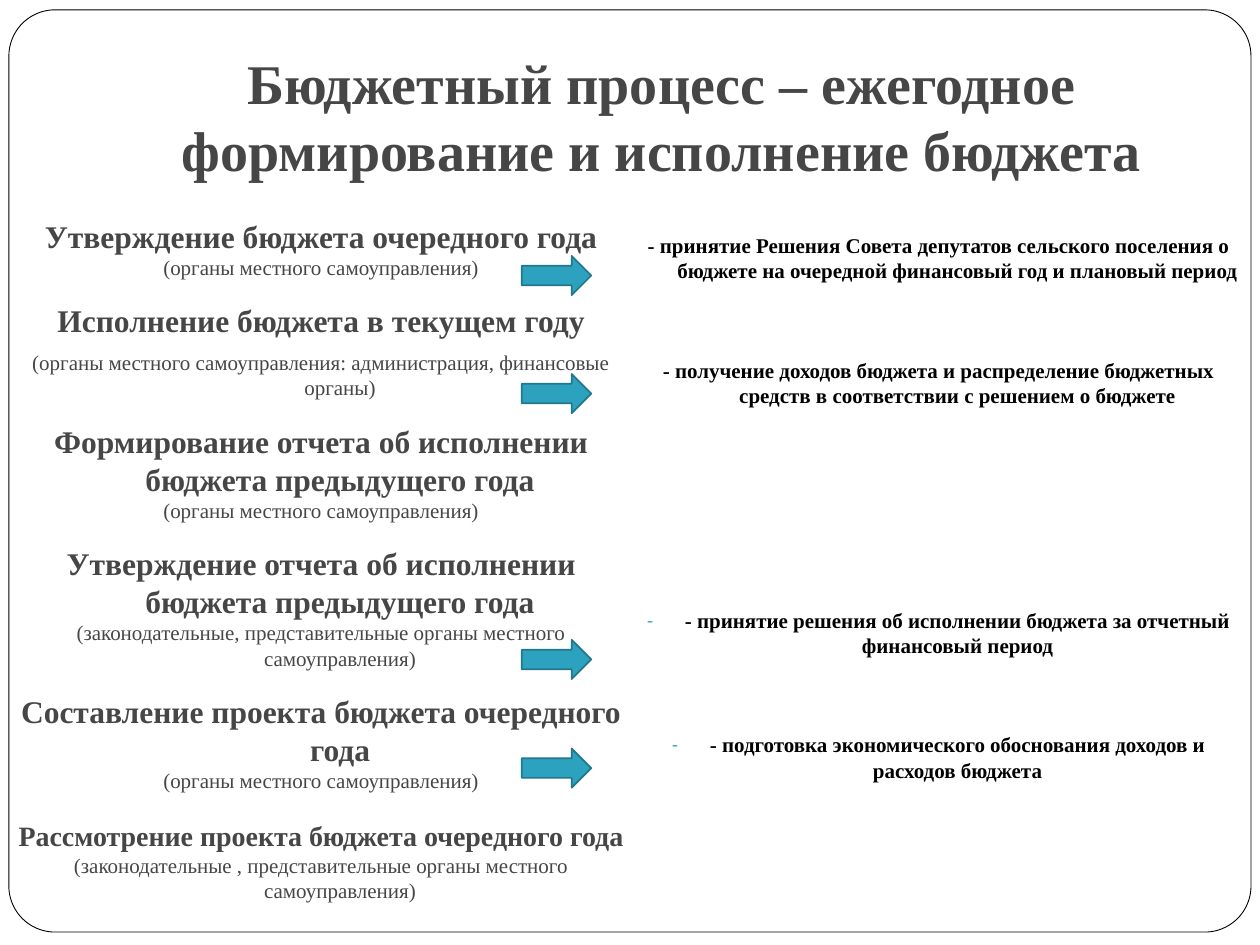
import pptx
import pptx.util
import pptx.dml.color
import pptx.enum.shapes
import pptx.enum.text
import pptx.oxml
import pptx.oxml.ns
from dataclasses import dataclass

Cm, Pt = pptx.util.Cm, pptx.util.Pt
Align, Anchor = pptx.enum.text.PP_ALIGN, pptx.enum.text.MSO_ANCHOR
Shape = pptx.enum.shapes.MSO_SHAPE


@dataclass(frozen=True)
class Theme:
    font: str = "Times New Roman"
    text: str = "464646"
    black: str = "000000"
    white: str = "FFFFFF"
    accent: str = "2DA2BF"
    accent_dark: str = "21788D"
    title: int = 32
    heading: int = 18
    last_heading: int = 16
    note: int = 12


T = Theme()
NOTE = "(органы местного самоуправления)"
STAGES = [
    ("Утверждение бюджета очередного года", NOTE, T.heading, 0, 0),
    ("Исполнение бюджета в текущем году",
     "(органы местного самоуправления: администрация, финансовые органы)",
     T.heading, 12.4, 6),
    ("Формирование отчета об исполнении бюджета предыдущего года", NOTE,
     T.heading, 12.4, 0),
    ("Утверждение отчета об исполнении бюджета предыдущего года",
     "(законодательные, представительные органы местного самоуправления)",
     T.heading, 12.4, 0),
    ("Составление проекта бюджета очередного года", NOTE, T.heading, 12.4, 0),
    ("Рассмотрение проекта бюджета очередного года",
     "(законодательные , представительные органы местного самоуправления)",
     T.last_heading, 14.9, 0),
]
RESULTS = [
    ("- принятие Решения Совета депутатов сельского поселения о бюджете "
     "на очередной финансовый год и плановый период", 0, False),
    ("- получение доходов бюджета и распределение бюджетных средств "
     "в соответствии с решением о бюджете", 42.3, False),
    ("- принятие решения об исполнении бюджета за отчетный финансовый период",
     114.3, True),
    ("- подготовка экономического обоснования доходов и расходов бюджета",
     42.3, True),
]
ARROW_TOPS = [5.16, 7.54, 12.9, 15.09]


def rgb(value):
    return pptx.dml.color.RGBColor.from_string(value)


def apply(obj, values):
    for name, value in values.items():
        setattr(obj, name, value)


def place(sp, box):
    apply(sp, dict(zip(("left", "top", "width", "height"), map(Cm, box))))


def set_frame(tf, anchor, bottom=0.13):
    apply(tf, {
        "word_wrap": True, "auto_size": pptx.enum.text.MSO_AUTO_SIZE.NONE,
        "vertical_anchor": anchor,
        "margin_left": Cm(0.25), "margin_right": Cm(0.25),
        "margin_top": Cm(0.13), "margin_bottom": Cm(bottom),
    })


def add_text(p, text, size, color, bold):
    r = p.add_run()
    r.text = text
    apply(r.font, {"name": T.font, "size": Pt(size), "bold": bold})
    r.font.color.rgb = rgb(color)


def set_bullet(p, dash):
    pPr = p._p.get_or_add_pPr()
    for name, value in {"marL": Cm(0.76), "indent": -Cm(0.76)}.items():
        pPr.set(name, str(int(value)))
    ns = pptx.oxml.ns.nsdecls("a")
    parts = ["<a:buNone %s/>" % ns]
    if dash:
        parts = [
            '<a:buClr %s><a:srgbClr val="%s"/></a:buClr>' % (ns, T.accent),
            '<a:buSzPct %s val="85000"/>' % ns,
            '<a:buFont %s typeface="%s"/>' % (ns, T.font),
            '<a:buChar %s char="-"/>' % ns,
        ]
    for part in parts:
        pPr.append(pptx.oxml.parse_xml(part))


def add_item(tf, text, size, color, bold, before=0, dash=False):
    p = tf.add_paragraph() if tf.paragraphs[0].runs else tf.paragraphs[0]
    set_bullet(p, dash)
    apply(p, {"alignment": Align.CENTER, "space_before": Pt(before),
              "space_after": Pt(0), "line_spacing": 1.0})
    add_text(p, text, size, color, bold)


def add_box(s, kind, box, fill, line, width):
    sp = s.shapes.add_shape(kind, *map(Cm, box))
    sp.shadow.inherit = False
    sp.fill.solid()
    sp.fill.fore_color.rgb = rgb(fill)
    sp.line.color.rgb = rgb(line)
    sp.line.width = Pt(width)
    return sp


def frame(s, box):
    sp = add_box(s, Shape.ROUNDED_RECTANGLE, box, T.white, T.black, 0.5)
    sp.adjustments[0] = 0.05
    s.shapes.element.insert(2, sp.element)


def title(sp, box, text):
    place(sp, box)
    set_frame(sp.text_frame, Anchor.BOTTOM, 0.25)
    p = sp.text_frame.paragraphs[0]
    p.alignment = Align.CENTER
    add_text(p, text, T.title, T.text, True)


def stages(sp, box):
    place(sp, box)
    tf = sp.text_frame
    set_frame(tf, Anchor.TOP)
    for heading, note, size, before, note_before in STAGES:
        add_item(tf, heading, size, T.text, True, before)
        add_item(tf, note, T.note, T.text, False, note_before)


def results(sp, box):
    place(sp, box)
    tf = sp.text_frame
    set_frame(tf, Anchor.TOP)
    for text, before, dash in RESULTS:
        add_item(tf, text, T.note, T.black, True, before, dash)


def arrows(s, box):
    left, top, width, height = box
    for y in ARROW_TOPS:
        add_box(s, Shape.RIGHT_ARROW, (left, top + y, width, height),
                T.accent, T.accent_dark, 1)


def main():
    prs = pptx.Presentation()
    apply(prs, {"slide_width": Cm(25.4), "slide_height": Cm(19.05)})
    s = prs.slides.add_slide(prs.slide_layouts[3])
    heading, left, right = s.placeholders
    frame(s, (0.18, 0.2, 25.04, 18.59))
    title(heading, (2.54, 0.76, 21.59, 3.18),
          "Бюджетный процесс – ежегодное формирование и исполнение бюджета")
    stages(left, (0, 4.24, 12.95, 14.4))
    results(right, (12.45, 4.56, 12.95, 14.1))
    arrows(s, (10.52, 0, 1.4, 0.79))
    prs.save("out.pptx")


if __name__ == "__main__":
    main()
